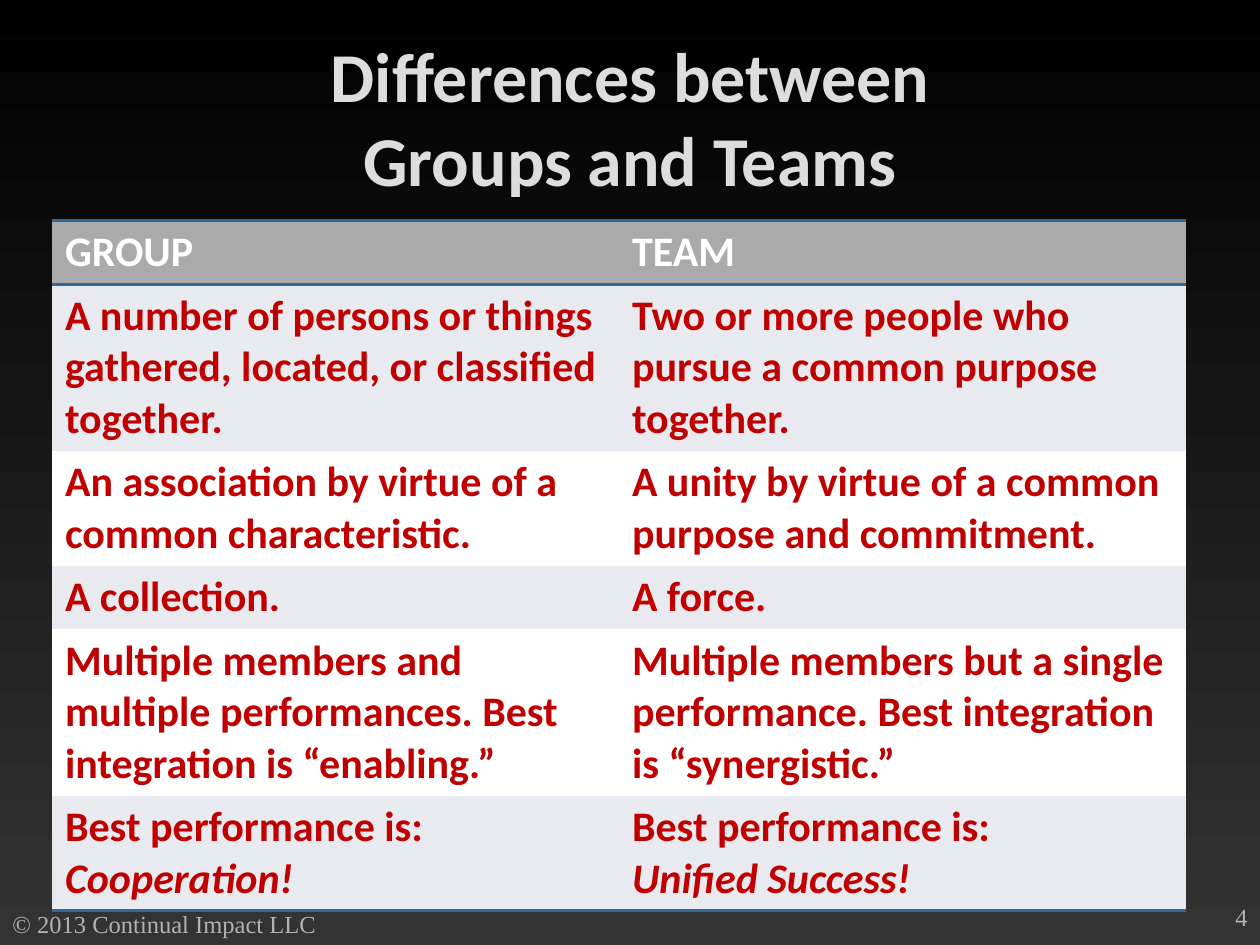
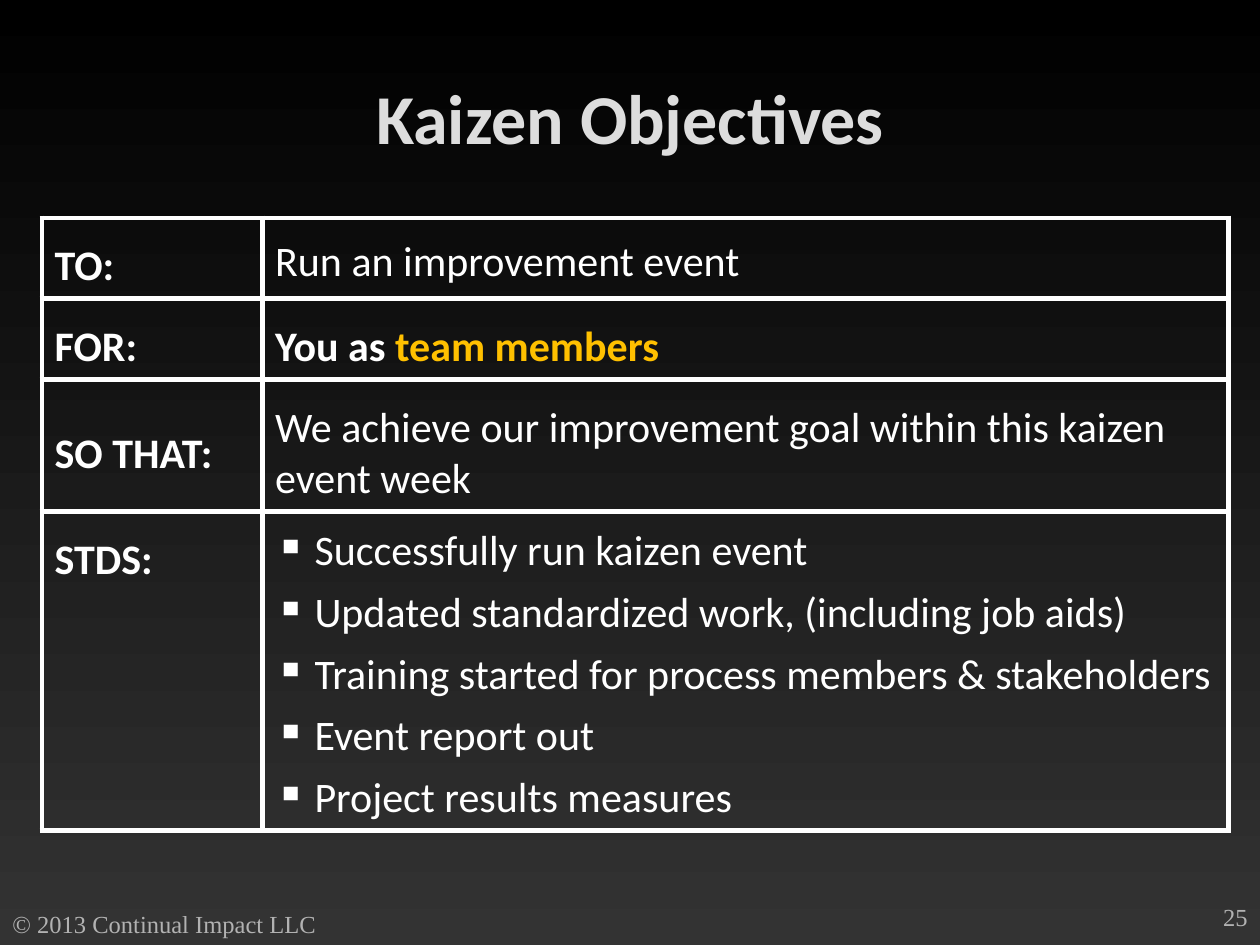
"""Build two training slides: groups versus teams, and kaizen objectives."""
from dataclasses import dataclass

import lxml.etree
import pptx
import pptx.dml.color
import pptx.enum.text
import pptx.oxml
import pptx.oxml.ns
import pptx.util

Pt = pptx.util.Pt
RGB = pptx.dml.color.RGBColor.from_string
qn = pptx.oxml.ns.qn
ALIGN = pptx.enum.text.PP_ALIGN
ANCHOR = pptx.enum.text.MSO_ANCHOR


@dataclass(frozen=True)
class Theme:
    """Colours, fonts and type sizes of the deck."""
    night: str = "000000"
    charcoal: str = "333333"
    title: str = "DDDDDD"
    footer: str = "B2B2B2"
    white: str = "FFFFFF"
    header: str = "AAAAAA"
    band: str = "E8EAEF"
    rule: str = "336699"
    red: str = "C00000"
    amber: str = "FFC000"
    body_font: str = "Calibri"
    footer_font: str = "Times New Roman"
    title_size: int = 40
    body_size: int = 24
    footer_size: int = 14


THEME = Theme()


def add_run(paragraph, text, color, size=THEME.body_size, font=THEME.body_font,
            bold=False, italic=False):
    """Add one formatted run to a paragraph."""
    run = paragraph.add_run()
    run.text = text
    run.font.size = Pt(size)
    run.font.bold = bold
    run.font.italic = italic
    run.font.color.rgb = RGB(color)
    run.font.name = font
    return run


def add_borders(cell, sides, color, width):
    """Draw solid borders on the named sides, given in the order L, R, T, B."""
    properties = cell._tc.get_or_add_tcPr()
    for side in sides:
        line = lxml.etree.SubElement(properties, qn(f"a:ln{side}"), w=str(int(Pt(width))))
        fill = lxml.etree.SubElement(line, qn("a:solidFill"))
        lxml.etree.SubElement(fill, qn("a:srgbClr"), val=color)


deck = pptx.Presentation()
deck.slide_width, deck.slide_height = Pt(720), Pt(540)

backdrop = deck.slide_master.background.fill
backdrop.gradient()
backdrop.gradient_angle = 270
for stop, shade, position in zip(backdrop.gradient_stops, (THEME.night, THEME.charcoal), (0, 1)):
    stop.color.rgb = RGB(shade)
    stop.position = position

comparison = [
    ("GROUP", "TEAM", 1),
    ("A number of persons or things gathered, located, or classified together.",
     "Two or more people who pursue a common purpose together.", 3),
    ("An association by virtue of a common characteristic.",
     "A unity by virtue of a common purpose and commitment.", 2),
    ("A collection.", "A force.", 1),
    ("Multiple members and multiple performances. Best integration is “enabling.”",
     "Multiple members but a single performance. Best integration is “synergistic.”", 3),
    ("Best performance is:", "Best performance is:", 2),
]
outcomes = ["Cooperation!", "Unified Success!"]
objectives = [
    ("TO:", [[("Run an improvement event", THEME.white, False)]], 46.25, 8),
    ("FOR:", [[("You as ", THEME.white, True), ("team members", THEME.amber, True)]], 46.25, 13),
    ("SO THAT:", [[("We achieve our improvement goal within this kaizen event week",
                    THEME.white, False)]], 75.5, 13),
    ("STDS:", [[(standard, THEME.white, False)] for standard in (
        "Successfully run kaizen event",
        "Updated standardized work, (including job aids)",
        "Training started for process members & stakeholders",
        "Event report out",
        "Project results measures")], 182, 8),
]
line_height, cell_padding = 29.25, 7.25
pages = [
    (["Differences between", "Groups and Teams"], "4", (30, 126), (324, 324),
     [lines * line_height + cell_padding for *_, lines in comparison]),
    (["Kaizen Objectives"], "25", (24, 124.5), (126, 552),
     [height for _, _, height, _ in objectives]),
]

tables = []
for title_lines, number, (left, top), widths, heights in pages:
    slide = deck.slides.add_slide(deck.slide_layouts[6])

    for text, box, alignment in (
            ("© 2013 Continual Impact LLC", (0, 516, 276, 24), ALIGN.LEFT),
            (number, (552, 512, 168, 28), ALIGN.RIGHT)):
        footer = slide.shapes.add_textbox(*map(Pt, box)).text_frame
        footer.word_wrap = True
        footer.paragraphs[0].alignment = alignment
        add_run(footer.paragraphs[0], text, THEME.footer, THEME.footer_size, THEME.footer_font)

    title = slide.shapes.add_textbox(Pt(36), Pt(21.5), Pt(648), Pt(90)).text_frame
    title.word_wrap = True
    title.vertical_anchor = ANCHOR.MIDDLE
    heading = title.paragraphs[0]
    heading.alignment = ALIGN.CENTER
    for index, title_line in enumerate(title_lines):
        if index:
            heading.add_line_break()
        run = add_run(heading, title_line, THEME.title, THEME.title_size, bold=True)
        effects = lxml.etree.Element(qn("a:effectLst"))
        shadow = lxml.etree.SubElement(effects, qn("a:outerShdw"), dist="38100", dir="2700000")
        lxml.etree.SubElement(shadow, qn("a:srgbClr"), val=THEME.night)
        run.font._element.find(qn("a:solidFill")).addnext(effects)

    frame = slide.shapes.add_table(len(heights), len(widths), Pt(left), Pt(top),
                                   Pt(sum(widths)), Pt(sum(heights)))
    table = frame.table
    table.first_row = table.horz_banding = False
    for style in table._tbl.iter(qn("a:tableStyleId")):
        style.text = "{2D5ABB26-0587-4C30-8999-92F81FD0307C}"
    for column, width in zip(table.columns, widths):
        column.width = Pt(width)
    for row, height in zip(table.rows, heights):
        row.height = Pt(height)
    tables.append(table)

differences, goals = tables

last = len(comparison) - 1
for row, (group, team, _) in enumerate(comparison):
    for column, text in enumerate((group, team)):
        cell = differences.cell(row, column)
        add_borders(cell, {0: "TB", last: "B"}.get(row, ""), THEME.rule, 2)
        cell.fill.solid()
        cell.fill.fore_color.rgb = RGB(
            THEME.header if row == 0 else THEME.band if row % 2 else THEME.white)
        add_run(cell.text_frame.paragraphs[0], text,
                THEME.red if row else THEME.white, bold=True)
        if row == last:
            outcome = cell.text_frame.add_paragraph()
            add_run(outcome, outcomes[column], THEME.red, bold=True, italic=True)

for row, (label, answer, _, answer_margin) in enumerate(objectives):
    label_runs = [[(label, THEME.white, True)]]
    for column, (content, margin) in enumerate(((label_runs, 13), (answer, answer_margin))):
        cell = goals.cell(row, column)
        add_borders(cell, "LRTB", THEME.white, 3)
        cell.fill.background()
        cell.margin_top = Pt(margin)
        cell.vertical_anchor = ANCHOR.TOP if label == "STDS:" else ANCHOR.MIDDLE
        for index, runs in enumerate(content):
            paragraph = cell.text_frame.add_paragraph() if index else cell.text_frame.paragraphs[0]
            if len(content) > 1:
                properties = paragraph._p.get_or_add_pPr()
                properties.set("marL", str(int(Pt(22.5))))
                properties.set("indent", str(-int(Pt(22.5))))
                lxml.etree.SubElement(properties, qn("a:buChar"), char="▪")
                paragraph.space_after = Pt(6)
            for text, color, bold in runs:
                add_run(paragraph, text, color, bold=bold)

deck.save("out.pptx")
